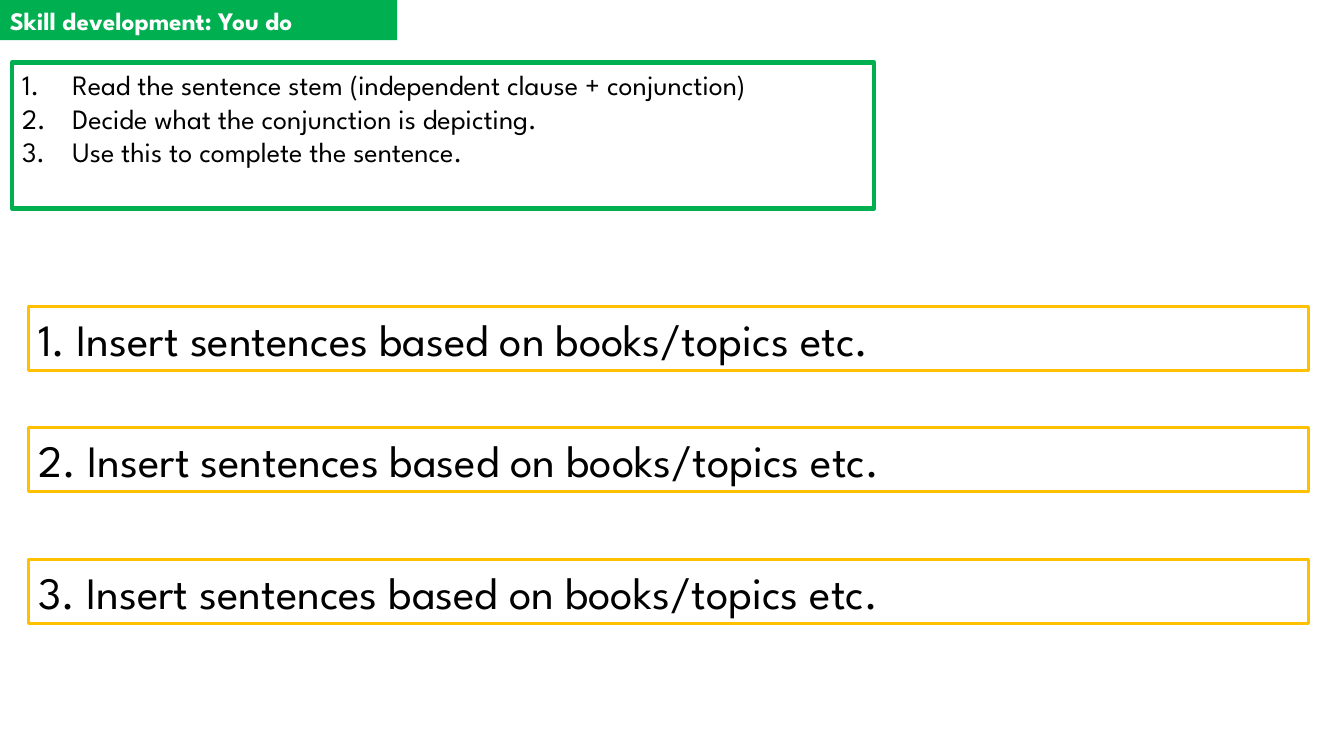
from dataclasses import dataclass

from lxml.etree import SubElement
from pptx import Presentation
from pptx.dml.color import RGBColor
from pptx.enum.text import MSO_ANCHOR
from pptx.oxml.ns import qn
from pptx.util import Inches, Pt


@dataclass(frozen=True)
class Theme:
    """Colours, font and type sizes of the lesson slide."""
    font: str = "League Spartan"
    green: str = "00B050"
    amber: str = "FFC000"
    white: str = "FFFFFF"
    black: str = "000000"
    heading_size: int = 18
    steps_size: int = 20
    sentence_size: int = 32


class LessonSlide:
    """Draws lesson elements, placed in percent of the slide's size."""

    def __init__(self, deck, theme):
        self.deck = deck
        self.theme = theme
        self.page = deck.slides.add_slide(deck.slide_layouts[6])

    def box(self, area, lines, size, color, fill=None, line=None, line_width=0, bold=False):
        left, top, width, height = (
            int(share * whole / 100)
            for share, whole in zip(area, (self.deck.slide_width, self.deck.slide_height) * 2)
        )
        box = self.page.shapes.add_textbox(left, top, width, height)
        if fill:
            box.fill.solid()
            box.fill.fore_color.rgb = RGBColor.from_string(fill)
        if line:
            box.line.color.rgb = RGBColor.from_string(line)
            box.line.width = Pt(line_width)
        frame = box.text_frame
        frame.word_wrap = True
        frame.vertical_anchor = MSO_ANCHOR.TOP
        frame.text = "\n".join(lines)
        for para in frame.paragraphs:
            for span in para.runs:
                span.font.name = self.theme.font
                span.font.size = Pt(size)
                span.font.bold = bold
                span.font.color.rgb = RGBColor.from_string(color)
        return box

    def heading(self, area, text):
        theme = self.theme
        self.box(area, [text], theme.heading_size, theme.white, fill=theme.green, bold=True)

    def steps(self, area, lines):
        theme = self.theme
        box = self.box(area, lines, theme.steps_size, theme.black, theme.white, theme.green, 3)
        for para in box.text_frame.paragraphs:
            properties = para._p.get_or_add_pPr()
            properties.set("marL", str(Inches(0.5)))
            properties.set("indent", str(-Inches(0.5)))
            SubElement(properties, qn("a:buFont"), typeface="+mj-lt")
            SubElement(properties, qn("a:buAutoNum"), type="arabicPeriod")

    def sentence(self, area, text):
        theme = self.theme
        self.box(area, [text], theme.sentence_size, theme.black, line=theme.amber, line_width=2.25)


def main():
    deck = Presentation()
    deck.slide_width = Inches(13.33)
    deck.slide_height = Inches(7.5)
    lesson = LessonSlide(deck, Theme())

    lesson.heading((0, 0, 29.56, 5.33), "Skill development: You do")
    lesson.steps((0.9, 8.27, 64.14, 19.33), [
        "Read the sentence stem (independent clause + conjunction)",
        "Decide what the conjunction is depicting.",
        "Use this to complete the sentence.",
    ])
    for number, top in enumerate((40.53, 56.53, 74), start=1):
        lesson.sentence(
            (2.1, top, 95.27, 8.53),
            f"{number}. Insert sentences based on books/topics etc.",
        )
    deck.save("out.pptx")


if __name__ == "__main__":
    main()
